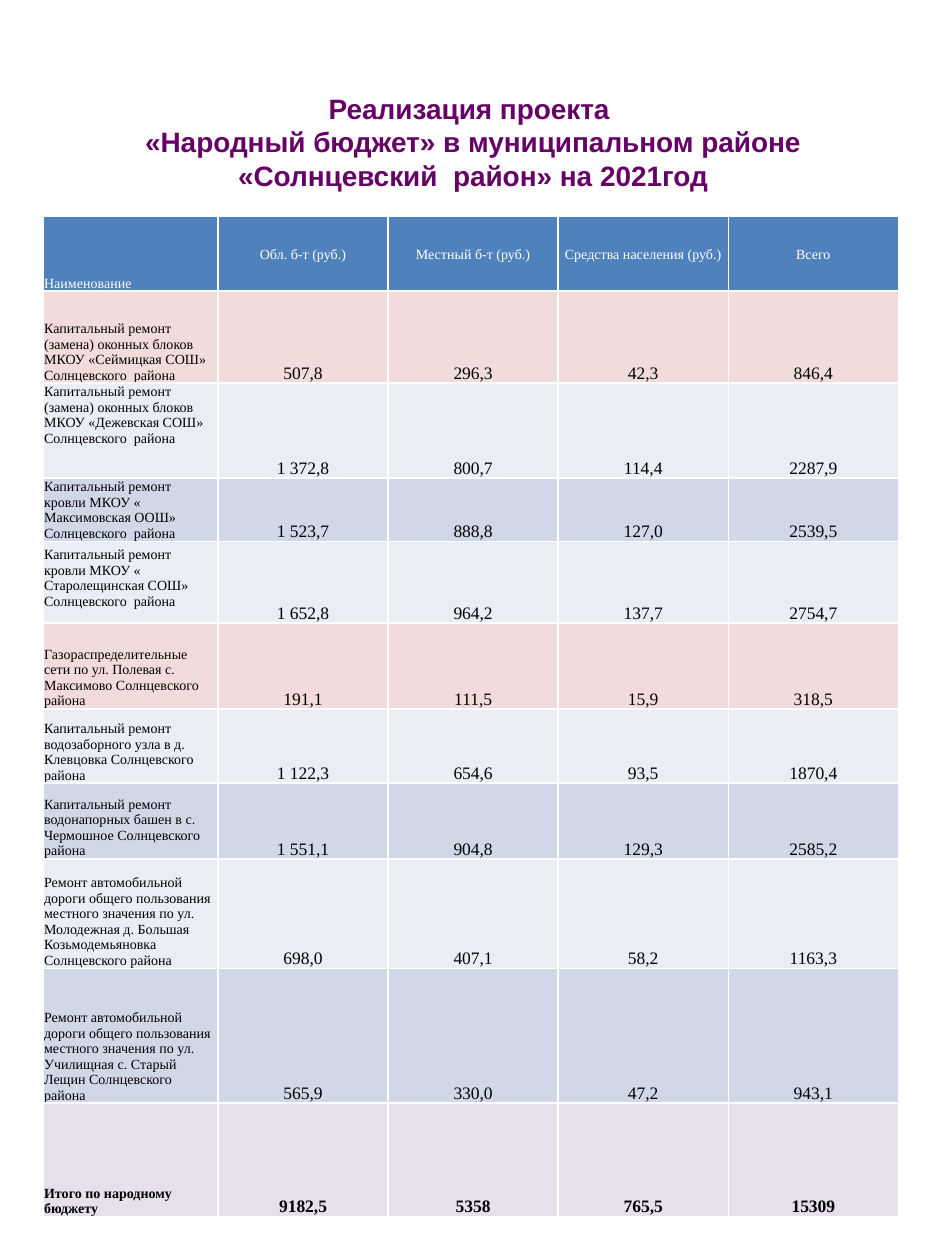
from typing import NamedTuple

from pptx import Presentation
from pptx.dml.color import RGBColor
from pptx.enum.text import MSO_ANCHOR, MSO_AUTO_SIZE, PP_ALIGN
from pptx.util import Inches, Pt

LEFT, CENTER = PP_ALIGN.LEFT, PP_ALIGN.CENTER
MIDDLE, BOTTOM = MSO_ANCHOR.MIDDLE, MSO_ANCHOR.BOTTOM
NO_FIT = MSO_AUTO_SIZE.NONE

PURPLE = RGBColor(0x66, 0x00, 0x66)
WHITE = RGBColor(0xFF, 0xFF, 0xFF)
BLACK = RGBColor(0x00, 0x00, 0x00)
BLUE = RGBColor(0x4F, 0x81, 0xBD)
PINK = RGBColor(0xF2, 0xDC, 0xDB)
PALE = RGBColor(0xE9, 0xED, 0xF4)
GREY = RGBColor(0xD0, 0xD8, 0xE8)
LILAC = RGBColor(0xE6, 0xE0, 0xEC)

TITLE = ("Реализация проекта \v«Народный бюджет» в муниципальном районе "
         "«Солнцевский  район» на 2021год")
HEADS = ("Наименование", "Обл. б-т (руб.)", "Местный б-т (руб.)",
         "Средства населения (руб.)", "Всего")
WIDTHS = (1.39, 1.35, 1.35, 1.35, 1.35)
HEAD_HEIGHT = 0.59
INSET = 0.01


class Item(NamedTuple):
    name: str
    sums: tuple[str, ...]
    height: float
    fill: RGBColor
    lift: float = 0  # space kept below the name, in inches
    bold: bool = False


ITEMS = (
    Item("Капитальный ремонт (замена) оконных блоков МКОУ «Сеймицкая СОШ» Солнцевского  района",
         ("507,8", "296,3", "42,3", "846,4"), 0.73, PINK),
    Item("Капитальный ремонт (замена) оконных блоков МКОУ «Дежевская СОШ» Солнцевского  района",
         ("1 372,8", "800,7", "114,4", "2287,9"), 0.75, PALE, lift=0.25),
    Item("Капитальный ремонт кровли МКОУ « Максимовская ООШ» Солнцевского  района",
         ("1 523,7", "888,8", "127,0", "2539,5"), 0.5, GREY),
    Item("Капитальный ремонт кровли МКОУ « Старолещинская СОШ» Солнцевского  района",
         ("1 652,8", "964,2", "137,7", "2754,7"), 0.65, PALE, lift=0.11),
    Item("Газораспределительные сети по ул. Полевая с. Максимово Солнцевского  района",
         ("191,1", "111,5", "15,9", "318,5"), 0.68, PINK),
    Item("Капитальный ремонт водозаборного узла в д. Клевцовка Солнцевского  района",
         ("1 122,3", "654,6", "93,5", "1870,4"), 0.59, PALE),
    Item("Капитальный ремонт водонапорных башен в с. Чермошное Солнцевского  района",
         ("1 551,1", "904,8", "129,3", "2585,2"), 0.6, GREY),
    Item("Ремонт автомобильной дороги общего пользования местного значения по ул. "
         "Молодежная д. Большая Козьмодемьяновка Солнцевского района",
         ("698,0", "407,1", "58,2", "1163,3"), 0.87, PALE),
    Item("Ремонт автомобильной дороги общего пользования местного значения по ул. "
         "Училищная с. Старый Лещин Солнцевского  района",
         ("565,9", "330,0", "47,2", "943,1"), 1.07, GREY),
    Item("Итого по народному бюджету",
         ("9182,5", "5358", "765,5", "15309"), 0.9, LILAC, bold=True),
)


def set_font(text, face: str, size: int, color: RGBColor, bold: bool) -> None:
    """Format every run of a text frame."""
    for para in text.paragraphs:
        for run in para.runs:
            font = run.font
            font.name, font.size, font.bold = face, Pt(size), bold
            font.color.rgb = color


def add_title(slide) -> None:
    title = slide.shapes.title
    title.left, title.top = Inches(0.38), Inches(0.4)
    title.width, title.height = Inches(6.75), Inches(1.45)
    text = title.text_frame
    text.text = TITLE
    text.word_wrap, text.auto_size = True, NO_FIT
    text.vertical_anchor = MIDDLE
    text.paragraphs[0].alignment = CENTER
    set_font(text, "Arial", 16, PURPLE, True)


def fill_cell(cell, words: str, fill: RGBColor, color: RGBColor, size: int,
              align: PP_ALIGN, anchor: MSO_ANCHOR, bold: bool, lift: float) -> None:
    cell.fill.solid()
    cell.fill.fore_color.rgb = fill
    cell.margin_left = cell.margin_right = cell.margin_top = Inches(INSET)
    cell.margin_bottom = Inches(lift)
    cell.vertical_anchor = anchor
    cell.text_frame.text = words
    cell.text_frame.paragraphs[0].alignment = align
    set_font(cell.text_frame, "Times New Roman", size, color, bold)


def add_budget(slide) -> None:
    heights = (HEAD_HEIGHT, *(item.height for item in ITEMS))
    table = slide.shapes.add_table(
        len(heights), len(WIDTHS), Inches(0.34), Inches(1.72),
        Inches(sum(WIDTHS)), Inches(sum(heights))).table
    for col, width in zip(table.columns, WIDTHS):
        col.width = Inches(width)
    for row, height in zip(table.rows, heights):
        row.height = Inches(height)

    for col, head in enumerate(HEADS):
        align, anchor = (CENTER, MIDDLE) if col else (LEFT, BOTTOM)
        fill_cell(table.cell(0, col), head, BLUE, WHITE, 8, align, anchor, False, 0)
    for row, item in enumerate(ITEMS, 1):
        for col, words in enumerate((item.name, *item.sums)):
            size, align, lift = (10, CENTER, 0) if col else (8, LEFT, item.lift)
            fill_cell(table.cell(row, col), words, item.fill, BLACK, size,
                      align, BOTTOM, item.bold, lift)


def main() -> None:
    deck = Presentation()
    deck.slide_width, deck.slide_height = Inches(7.5), Inches(10)
    slide = deck.slides.add_slide(deck.slide_layouts[5])
    add_title(slide)
    add_budget(slide)
    deck.save("out.pptx")


if __name__ == "__main__":
    main()
